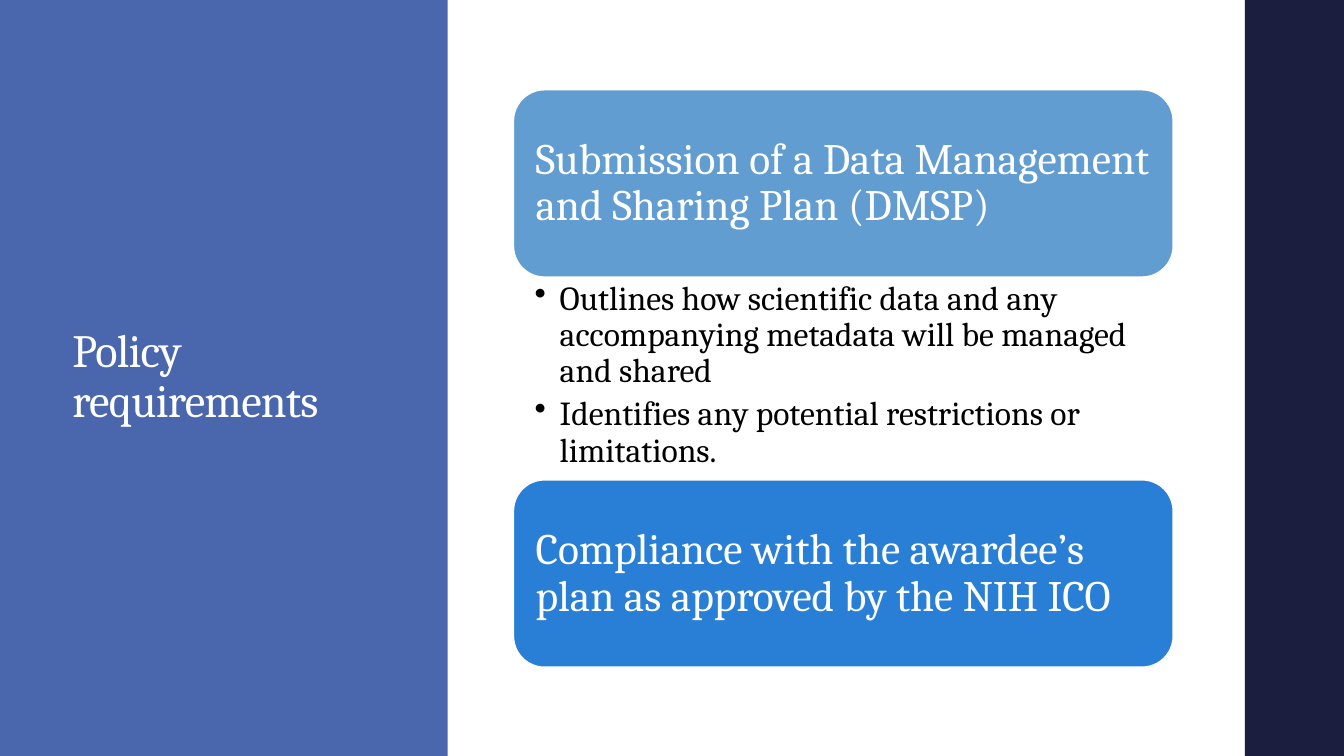
import pptx
import pptx.dml.color
import pptx.enum.shapes
import pptx.enum.text
import pptx.oxml
import pptx.oxml.ns
import pptx.util

SLIDE_WIDTH, SLIDE_HEIGHT = 13.33, 7.5
FONT = "Cambria"
WHITE, BLACK = "FFFFFF", "000000"
SHAPE = pptx.enum.shapes.MSO_SHAPE
ANCHOR = pptx.enum.text.MSO_ANCHOR

CARD_LEFT, CARD_WIDTH = 38.2, 49.1
CARD_TOP, CARD_HEIGHT, DETAIL_HEIGHT = 11.87, 24.8, 26.8
REQUIREMENTS = [
    ("Submission of a Data Management and Sharing Plan (DMSP)", "629DD1", [
        "Outlines how scientific data and any accompanying metadata will be managed and shared",
        "Identifies any potential restrictions or limitations.",
    ]),
    ("Compliance with the awardee’s plan as approved by the NIH ICO", "297FD5", []),
]


def color(hex_code):
    """Turn a hex string into a colour."""
    return pptx.dml.color.RGBColor.from_string(hex_code)


def apply_format(target, values):
    """Set every attribute named in the dict."""
    for name, value in values.items():
        setattr(target, name, value)


def place(left, top, width, height):
    """Turn percentages of the slide into lengths."""
    sizes = (SLIDE_WIDTH, SLIDE_HEIGHT, SLIDE_WIDTH, SLIDE_HEIGHT)
    return [pptx.util.Inches(size * share / 100)
            for size, share in zip(sizes, (left, top, width, height))]


def add_panel(slide, kind, area, fill, outline=None):
    """Add a filled shape, outlined only if a colour is given."""
    panel = slide.shapes.add_shape(kind, *place(*area))
    panel.shadow.inherit = False
    panel.fill.solid()
    panel.fill.fore_color.rgb = color(fill)
    if outline:
        panel.line.color.rgb = color(outline)
        panel.line.width = pptx.util.Pt(1.1)
    else:
        panel.line.fill.background()
    return panel


def write_text(holder, lines, size, hue, insets, anchor, space_after=0):
    """Fill a shape with left-aligned paragraphs and return them."""
    frame = holder.text_frame
    sides = ("margin_left", "margin_top", "margin_right", "margin_bottom")
    margins = {side: pptx.util.Inches(inset) for side, inset in zip(sides, insets)}
    apply_format(frame, {"word_wrap": True, "vertical_anchor": anchor, **margins})
    frame.text = "\n".join(lines)
    for paragraph in frame.paragraphs:
        apply_format(paragraph, {
            "alignment": pptx.enum.text.PP_ALIGN.LEFT,
            "line_spacing": 0.9,
            "space_after": pptx.util.Pt(space_after),
        })
        font = paragraph.runs[0].font
        apply_format(font, {"name": FONT, "size": pptx.util.Pt(size)})
        font.color.rgb = color(hue)
    return frame.paragraphs


def add_title(slide, wording):
    """Add the slightly condensed heading on the side panel."""
    title = slide.shapes.add_textbox(*place(4.65, 12.13, 22.28, 75.6))
    heading = write_text(title, [wording], 33, WHITE, (0.1, 0.05, 0.1, 0.05), ANCHOR.MIDDLE)[0]
    heading.runs[0].font._element.set("spc", "-50")


def add_details(slide, area, details):
    """Add the bulleted details below a requirement."""
    box = slide.shapes.add_textbox(*place(*area))
    indent = pptx.util.Inches(0.25)
    for item in write_text(box, details, 24, BLACK, (0.21, 0.04, 0.24, 0.04), ANCHOR.TOP, 4.8):
        item.level = 1
        properties = item._p.get_or_add_pPr()
        properties.set("marL", str(indent))
        properties.set("indent", str(-indent))
        bullet = pptx.oxml.parse_xml(
            f'<a:buChar {pptx.oxml.ns.nsdecls("a")} char="•"/>')
        properties.append(bullet)


def main():
    """Build the slide and save it."""
    deck = pptx.Presentation()
    apply_format(deck, {
        "slide_width": pptx.util.Inches(SLIDE_WIDTH),
        "slide_height": pptx.util.Inches(SLIDE_HEIGHT),
    })
    slide = deck.slides.add_slide(deck.slide_layouts[6])
    add_panel(slide, SHAPE.RECTANGLE, (0, 0, 33.3, 100), "4A66AC")
    add_title(slide, "Policy requirements")
    add_panel(slide, SHAPE.RECTANGLE, (92.62, 0, 7.38, 100), "1B1E3E")

    for row, (requirement, fill, details) in enumerate(REQUIREMENTS):
        top = CARD_TOP + row * (CARD_HEIGHT + DETAIL_HEIGHT)
        card = add_panel(slide, SHAPE.ROUNDED_RECTANGLE,
                         (CARD_LEFT, top, CARD_WIDTH, CARD_HEIGHT), fill, WHITE)
        write_text(card, [requirement], 31, WHITE, (0.13,) * 4, ANCHOR.MIDDLE)
        if details:
            add_details(slide, (CARD_LEFT, top + CARD_HEIGHT, CARD_WIDTH, DETAIL_HEIGHT), details)
    deck.save("out.pptx")


if __name__ == "__main__":
    main()
